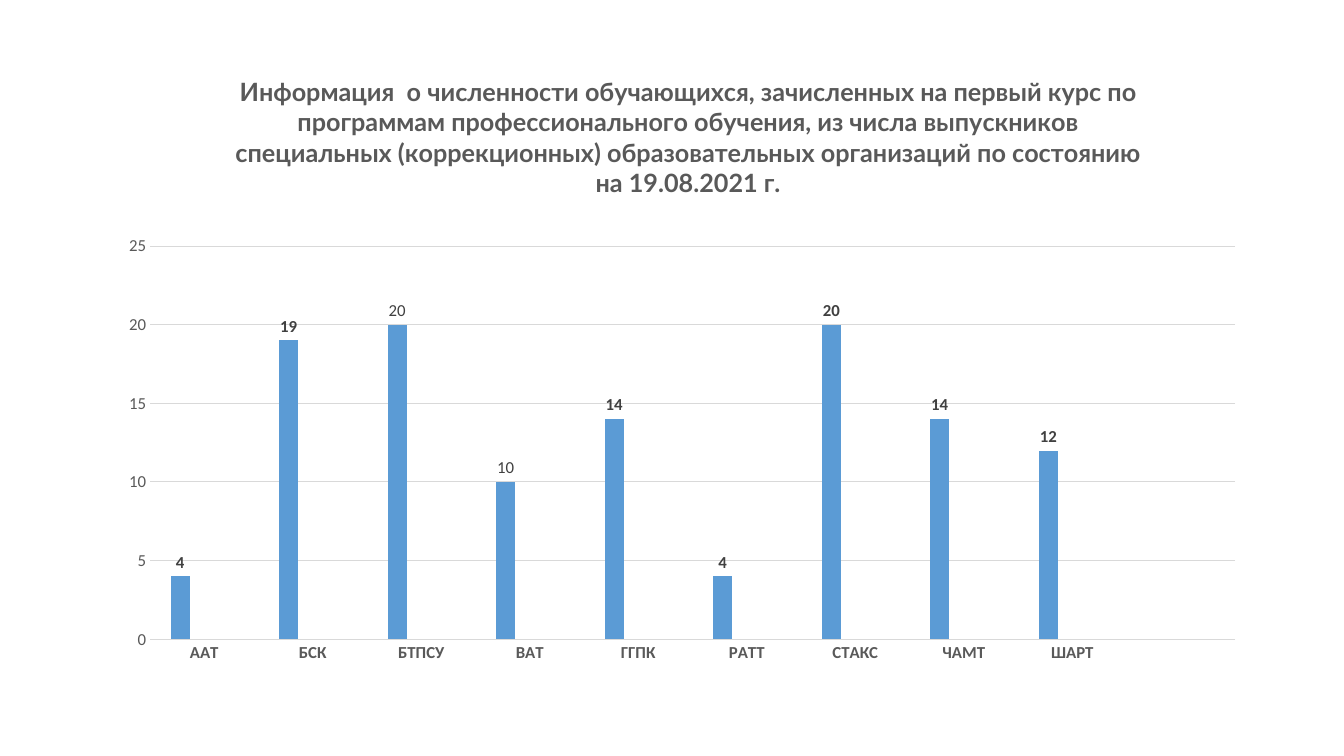
from dataclasses import dataclass

from lxml.etree import SubElement
from pptx import Presentation
from pptx.chart.data import CategoryChartData
from pptx.dml.color import RGBColor
from pptx.enum.chart import XL_CHART_TYPE, XL_LABEL_POSITION, XL_TICK_MARK
from pptx.oxml.ns import qn
from pptx.util import Inches, Pt


@dataclass(frozen=True)
class Theme:
    font: str = "Calibri"
    title_font: str = "Lato"
    title_size: int = 18
    label_size: int = 12
    text: str = "595959"
    label: str = "404040"
    line: str = "D9D9D9"
    series: tuple = ("5B9BD5", "ED7D31", "A5A5A5")


THEME = Theme()
TITLE = (
    "Информация  о численности обучающихся, зачисленных на первый курс по "
    "программам профессионального обучения, из числа выпускников "
    "специальных (коррекционных) образовательных организаций по состоянию "
    "на 19.08.2021 г."
)
# The last category is an empty slot on the axis
ENROLLED = {
    "ААТ": 4, "БСК": 19, "БТПСУ": 20, "ВАТ": 10, "ГГПК": 14,
    "РАТТ": 4, "СТАКС": 20, "ЧАМТ": 14, "ШАРТ": 12, "": None,
}
REGULAR_LABELS = ("БТПСУ", "ВАТ")


def style_font(font, size, color, bold=False, name=THEME.font):
    font.name = name
    font.size = Pt(size)
    font.bold = bold
    font.color.rgb = RGBColor.from_string(color)


def style_line(line):
    line.color.rgb = RGBColor.from_string(THEME.line)
    line.width = Pt(0.75)


def set_layout(element, **values):
    """Place a chart part by fractions of the chart's size."""
    layout = element.find(qn("c:layout"))
    if layout is None:
        layout = SubElement(element, qn("c:layout"))
        element.insert(0, layout)
    manual = SubElement(layout, qn("c:manualLayout"))
    if "w" in values:
        SubElement(manual, qn("c:layoutTarget")).set("val", "inner")
    for mode in ("xMode", "yMode"):
        SubElement(manual, qn(f"c:{mode}")).set("val", "edge")
    for key, value in values.items():
        SubElement(manual, qn(f"c:{key}")).set("val", str(value))


def add_column_chart(page):
    data = CategoryChartData()
    data.categories = list(ENROLLED)
    data.add_series("Series 1", list(ENROLLED.values()))
    for name in ("Series 2", "Series 3"):
        data.add_series(name, [None] * len(ENROLLED))
    frame = page.shapes.add_chart(
        XL_CHART_TYPE.COLUMN_CLUSTERED,
        Inches(1.03), Inches(0.43), Inches(11.45), Inches(6.29), data,
    )
    chart = frame.chart
    chart.has_legend = False
    chart.font.name = THEME.font
    chart.font.size = Pt(10)
    return chart


def style_title(chart):
    chart.has_title = True
    title = chart.chart_title
    title.include_in_layout = False
    para = title.text_frame.paragraphs[0]
    para.text = TITLE
    style_font(para.font, THEME.title_size, THEME.text, True, THEME.title_font)


def style_axes(chart):
    for axis, bold in ((chart.category_axis, True), (chart.value_axis, False)):
        axis.major_tick_mark = XL_TICK_MARK.NONE
        axis.minor_tick_mark = XL_TICK_MARK.NONE
        style_font(axis.tick_labels.font, THEME.label_size, THEME.text, bold)
    style_line(chart.category_axis.format.line)
    values = chart.value_axis
    values.minimum_scale, values.maximum_scale, values.major_unit = 0, 25, 5
    values.format.line.fill.background()
    style_line(values.major_gridlines.format.line)


def style_columns(chart):
    plot = chart.plots[0]
    plot.vary_by_categories = False
    plot.gap_width = 219
    plot.overlap = -27
    for series, color in zip(plot.series, THEME.series):
        series.format.fill.solid()
        series.format.fill.fore_color.rgb = RGBColor.from_string(color)

    # Value labels, bold except for two colleges
    enrolled = plot.series[0]
    labels = enrolled.data_labels
    labels.show_value = True
    labels.position = XL_LABEL_POSITION.OUTSIDE_END
    style_font(labels.font, THEME.label_size, THEME.label, True)
    for college in REGULAR_LABELS:
        label = enrolled.points[list(ENROLLED).index(college)].data_label
        style_font(label.font, THEME.label_size, THEME.label)
        label.position = XL_LABEL_POSITION.OUTSIDE_END


def main():
    deck = Presentation()
    deck.slide_width, deck.slide_height = Inches(13.33), Inches(7.5)
    page = deck.slides.add_slide(deck.slide_layouts[6])

    chart = add_column_chart(page)
    style_title(chart)
    style_axes(chart)
    style_columns(chart)

    # Positions of the title and the plot area
    set_layout(chart.chart_title._element, x=0.11, y=0.04)
    plot_area = chart.plots[0]._element.getparent()
    set_layout(plot_area, x=0.04, y=0.32, w=0.94, h=0.62)

    deck.save("out.pptx")


if __name__ == "__main__":
    main()
